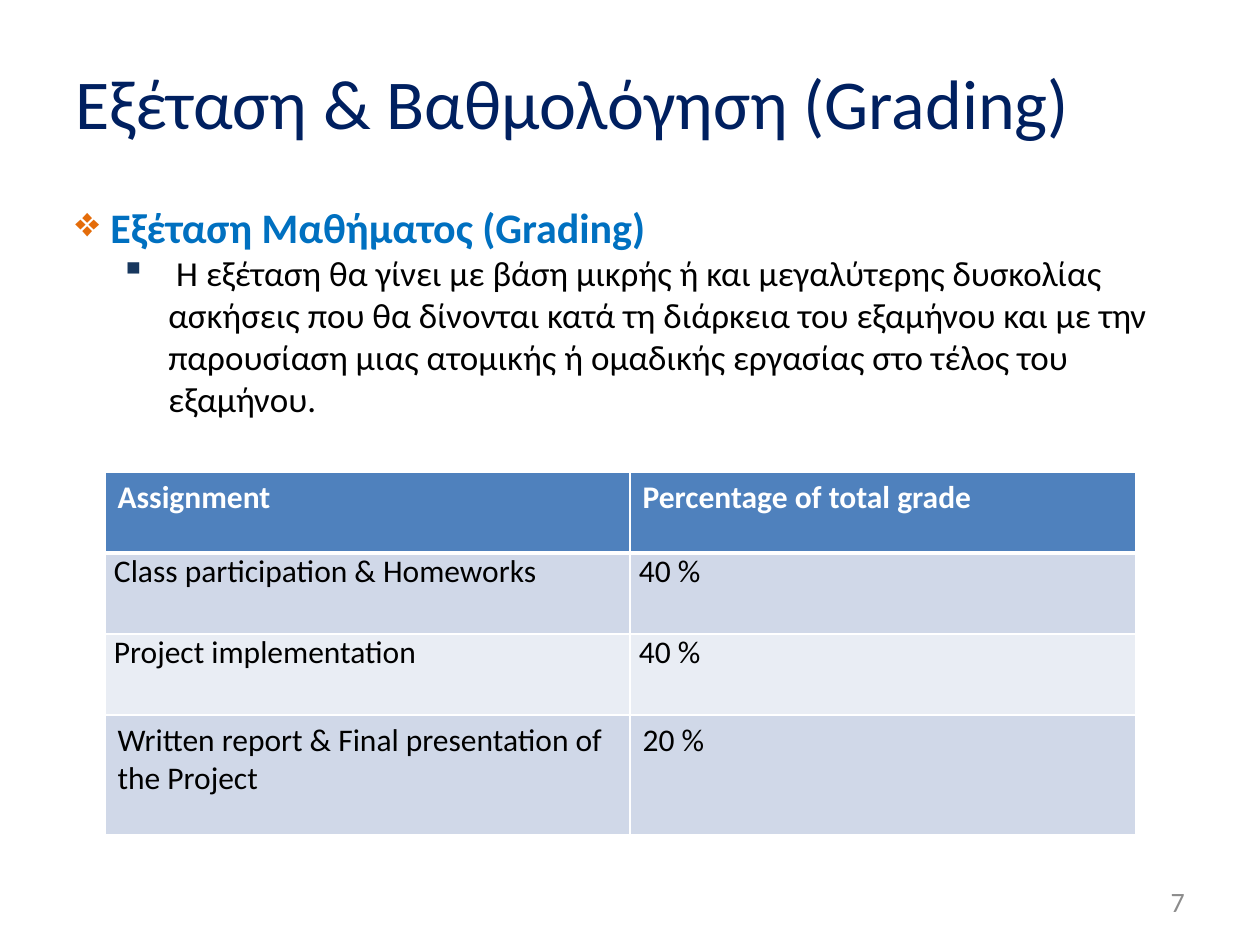
from lxml import etree
from pptx import Presentation
from pptx.dml.color import RGBColor
from pptx.enum.text import MSO_ANCHOR, PP_ALIGN
from pptx.oxml.ns import qn
from pptx.util import Pt

EMU_PER_PX = 914400 / 126
MIDDLE = MSO_ANCHOR.MIDDLE
TOP = MSO_ANCHOR.TOP
RIGHT = PP_ALIGN.RIGHT


def px(length):
    return round(length * EMU_PER_PX)


def style(paragraph, size, color, bold=False):
    font = paragraph.font if not paragraph.runs else paragraph.runs[0].font
    font.name = "Calibri"
    font.size = Pt(size)
    font.bold = bold
    font.color.rgb = RGBColor.from_string(color)


presentation = Presentation()
presentation.slide_width = px(1260)
presentation.slide_height = px(945)
slide = presentation.slides.add_slide(presentation.slide_layouts[6])

# Text boxes: title, body, slide number
frames = []
for left, top, width, height, anchor in [
    (63, 38, 1133, 127, MIDDLE),
    (63, 195, 1134, 248, TOP),
    (903, 876, 294, 50, MIDDLE),
]:
    box = slide.shapes.add_textbox(px(left), px(top), px(width), px(height))
    box.text_frame.word_wrap = True
    box.text_frame.vertical_anchor = anchor
    frames.append(box.text_frame)
title, body, number = frames

title.text = "Εξέταση & Βαθμολόγηση (Grading)"
style(title.paragraphs[0], 40, "002060")

number.text = "7"
number.paragraphs[0].alignment = RIGHT
style(number.paragraphs[0], 16, "8C8C8C")

# Bulleted body
body.text = (
    "Εξέταση Μαθήματος (Grading)\n"
    " Η εξέταση θα γίνει με βάση μικρής ή και μεγαλύτερης δυσκολίας ασκήσεις "
    "που θα δίνονται κατά τη διάρκεια του εξαμήνου και με την παρουσίαση μιας "
    "ατομικής ή ομαδικής εργασίας στο τέλος του εξαμήνου."
)
bullets = [
    # level, margin, hanging, character, bullet color, size, text color, bold
    (0, 35, 35, "❖", "E46C0A", 24, "0070C0", True),
    (1, 93, 48, "▪", "17375E", 20, "000000", False),
]
for paragraph, bullet in zip(body.paragraphs, bullets):
    level, margin, hanging, character, bullet_color, size, color, bold = bullet
    paragraph.level = level
    properties = paragraph._p.get_or_add_pPr()
    properties.set("marL", str(px(margin)))
    properties.set("indent", str(-px(hanging)))
    fill = etree.SubElement(properties, qn("a:buClr"))
    etree.SubElement(fill, qn("a:srgbClr"), val=bullet_color)
    etree.SubElement(properties, qn("a:buChar"), char=character)
    style(paragraph, size, color, bold)
body.paragraphs[1].space_after = Pt(6)

# Grading table
rows = [
    ("Assignment", "Percentage of total grade"),
    ("Class participation & Homeworks", "40 %"),
    ("Project implementation", "40 %"),
    ("Written report & Final presentation of the Project", "20 %"),
]
row_heights = [81, 81, 81, 120]
column_widths = [525, 506]
row_fills = ["4F81BD", "D0D8E8", "E9EDF4", "D0D8E8"]
table = slide.shapes.add_table(
    len(rows), len(column_widths), px(105), px(472),
    px(sum(column_widths)), px(sum(row_heights)),
).table
for column, width in zip(table.columns, column_widths):
    column.width = px(width)

for row_index, texts in enumerate(rows):
    table.rows[row_index].height = px(row_heights[row_index])
    header = row_index == 0
    for column_index, text in enumerate(texts):
        cell = table.cell(row_index, column_index)
        cell.text = text
        style(cell.text_frame.paragraphs[0], 18,
              "FFFFFF" if header else "000000", header)
        if row_index in (1, 2):
            cell.margin_left = cell.margin_right = px(9)
            cell.margin_top = cell.margin_bottom = 0

        # White borders, thick below the header
        thick_side = {0: "lnB", 1: "lnT"}.get(row_index)
        properties = cell._tc.get_or_add_tcPr()
        for side in ("lnL", "lnR", "lnT", "lnB"):
            border_width = Pt(3 if side == thick_side else 1)
            line = etree.SubElement(properties, qn(f"a:{side}"), w=str(border_width))
            fill = etree.SubElement(line, qn("a:solidFill"))
            etree.SubElement(fill, qn("a:srgbClr"), val="FFFFFF")
        cell.fill.solid()
        cell.fill.fore_color.rgb = RGBColor.from_string(row_fills[row_index])

presentation.save("out.pptx")
